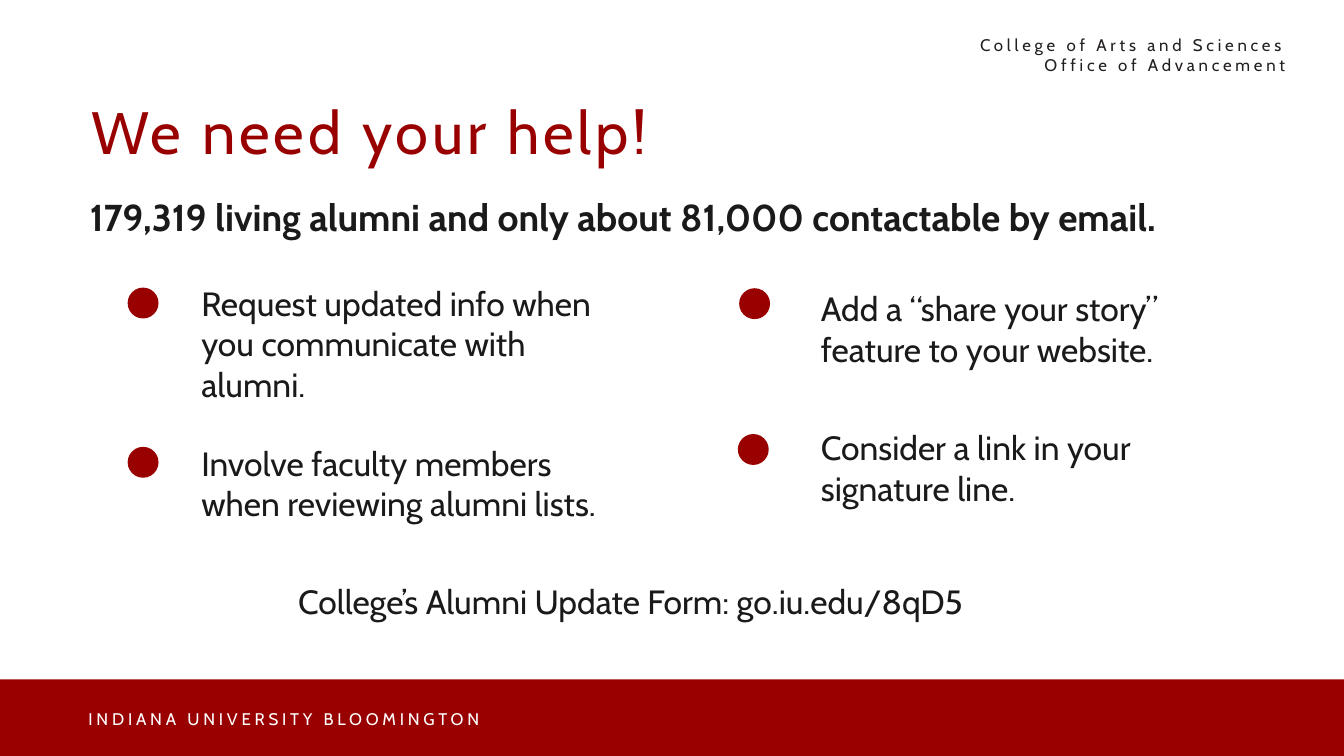
from dataclasses import dataclass

from pptx import Presentation
from pptx.dml.color import RGBColor
from pptx.enum.shapes import MSO_SHAPE as SHAPE
from pptx.enum.text import MSO_ANCHOR as ANCHOR, MSO_AUTO_SIZE as AUTOSIZE, PP_ALIGN as ALIGN
from pptx.util import Emu, Pt

PX = 4572  # EMU per px, 200 px to the inch
WIDTH, HEIGHT = 2000, 1125


@dataclass(frozen=True)
class Theme:
    font: str = "Cabin"
    crimson: RGBColor = RGBColor(0x99, 0x00, 0x00)
    ink: RGBColor = RGBColor(0x1A, 0x1A, 0x1A)
    header_ink: RGBColor = RGBColor(0x23, 0x1F, 0x20)
    white: RGBColor = RGBColor(0xFF, 0xFF, 0xFF)
    title: int = 32
    lead: int = 20
    body: int = 18
    small: int = 9
    tracking: int = 200  # hundredths of a point


THEME = Theme()


def emu(*lengths):
    return [Emu(n * PX) for n in lengths]


def set_attrs(target, values):
    for name, value in values.items():
        setattr(target, name, value)


def write(sp, text, size, color, bold=False, tracking=0, inset=(20, 20),
          indent=(0, 0), anchor=ANCHOR.TOP, para=None):
    """Fill a shape with one paragraph; inset is (x, y), indent is (left, first line)."""
    x, y = emu(*inset)
    tf = sp.text_frame
    set_attrs(tf, dict(word_wrap=True, auto_size=AUTOSIZE.NONE, vertical_anchor=anchor,
                       margin_left=x, margin_right=x, margin_top=y, margin_bottom=y))
    p = tf.paragraphs[0]
    set_attrs(p, dict(alignment=ALIGN.LEFT) | (para or {}))
    if any(indent):
        left, first = emu(*indent)
        pPr = p._p.get_or_add_pPr()
        pPr.set("marL", str(left))
        pPr.set("indent", str(first))
    r = p.add_run()
    r.text = text
    set_attrs(r.font, dict(name=THEME.font, size=Pt(size), bold=bold))
    r.font.color.rgb = color
    if tracking:
        r._r.get_or_add_rPr().set("spc", str(tracking))


def add_text(s, box, text, size, color, **options):
    write(s.shapes.add_textbox(*emu(*box)), text, size, color, **options)


def add_solid(s, kind, box):
    sp = s.shapes.add_shape(kind, *emu(*box))
    sp.shadow.inherit = False
    sp.fill.solid()
    sp.fill.fore_color.rgb = THEME.crimson
    sp.line.fill.background()


def add_small_caption(s, box, text, color, **para):
    add_text(s, box, text, THEME.small, color, tracking=THEME.tracking,
             indent=(100, -68), anchor=ANCHOR.MIDDLE, para=para)


def add_footer(s, box):
    left, top, _, _ = box
    add_solid(s, SHAPE.RECTANGLE, box)
    add_small_caption(s, (left + 80, top + 33, 1682, 52),
                      "INDIANA UNIVERSITY BLOOMINGTON", THEME.white)


def add_title(s, box):
    title = s.shapes.title
    set_attrs(title, dict(zip(("left", "top", "width", "height"), emu(*box))))
    write(title, "We need your help!", THEME.title, THEME.crimson, tracking=THEME.tracking)


def add_request(s, box, text, dot_offset):
    """A paragraph with a round marker placed relative to its box."""
    left, top, _, _ = box
    dx, dy = dot_offset
    add_solid(s, SHAPE.OVAL, (left + dx, top + dy, 46, 46))
    add_text(s, box, text, THEME.body, THEME.ink, para=dict(space_after=Pt(16)))


def add_requests(s, box):
    left, top, _, _ = box
    right = left + 922
    requests = [
        ((left, top, 658, 230), (-90, 27),
         "Request updated info when you communicate with alumni."),
        ((left, top + 238, 686, 144), (-90, 26),
         "Involve faculty members when reviewing alumni lists."),
        ((right, top + 8, 620, 152), (-102, 20),
         "Add a “share your story” feature to your website."),
        ((right, top + 215, 620, 146), (-104, 30),
         "Consider a link in your signature line."),
    ]
    for request_box, dot_offset, text in requests:
        add_request(s, request_box, text, dot_offset)


def main():
    prs = Presentation()
    prs.slide_width, prs.slide_height = emu(WIDTH, HEIGHT)
    s = prs.slides.add_slide(prs.slide_layouts[5])  # title only

    add_footer(s, (0, 1011, WIDTH, HEIGHT - 1011))
    add_title(s, (116, 121, 1418, 118))
    add_text(s, (80, 269, 1852, 122),
             "179,319 living alumni and only about 81,000 contactable by email.",
             THEME.lead, THEME.ink, bold=True, indent=(34, 0))
    add_requests(s, (280, 401, 1542, 382))
    add_text(s, (424, 851, 1154, 82), "College’s Alumni Update Form: go.iu.edu/8qD5",
             THEME.body, THEME.ink, inset=(20, 10),
             para=dict(line_spacing=1.07, space_after=Pt(6)))
    add_small_caption(s, (1342, 40, 590, 84),
                      "College of Arts and Sciences Office of Advancement",
                      THEME.header_ink, alignment=ALIGN.RIGHT)
    prs.save("out.pptx")


if __name__ == "__main__":
    main()
